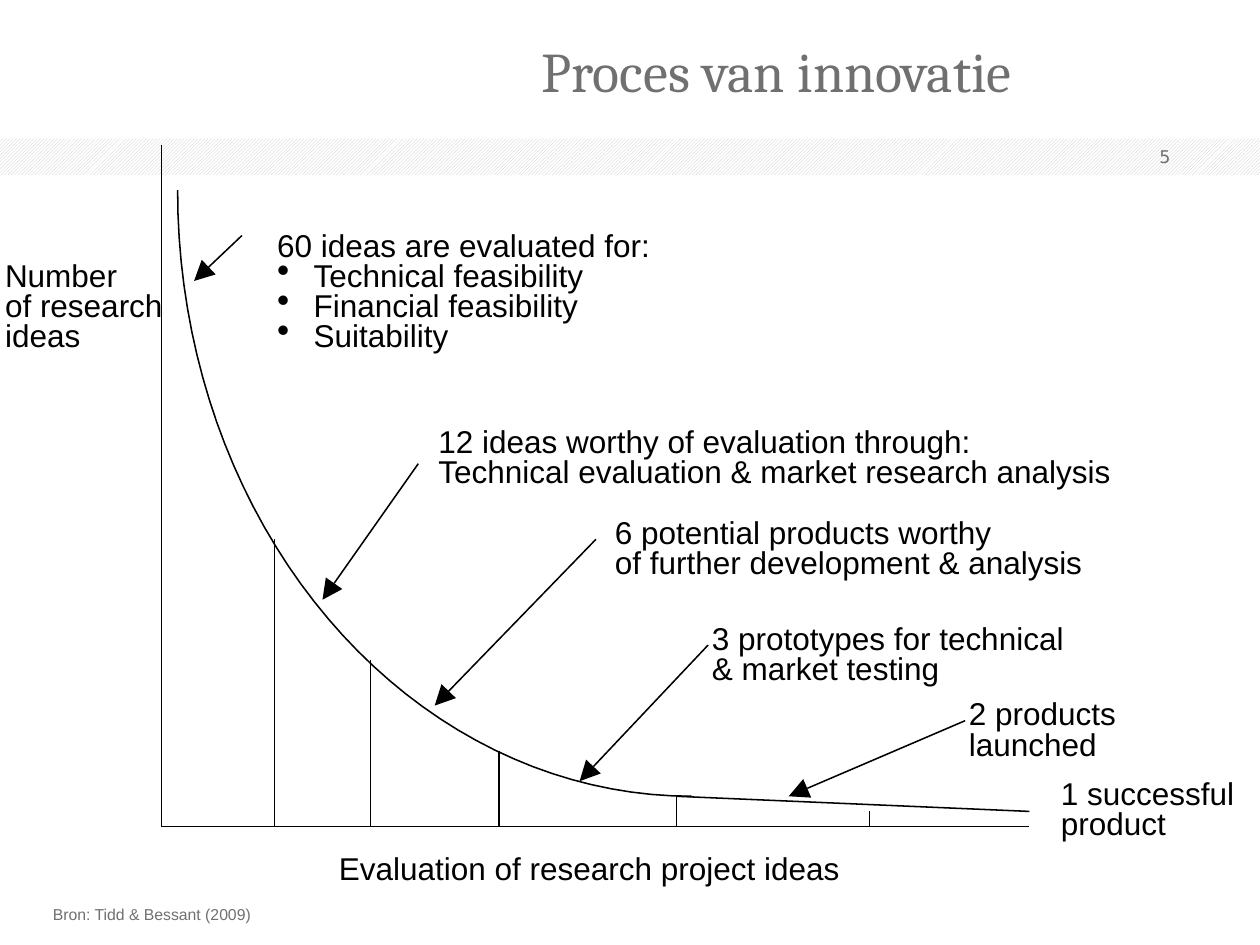
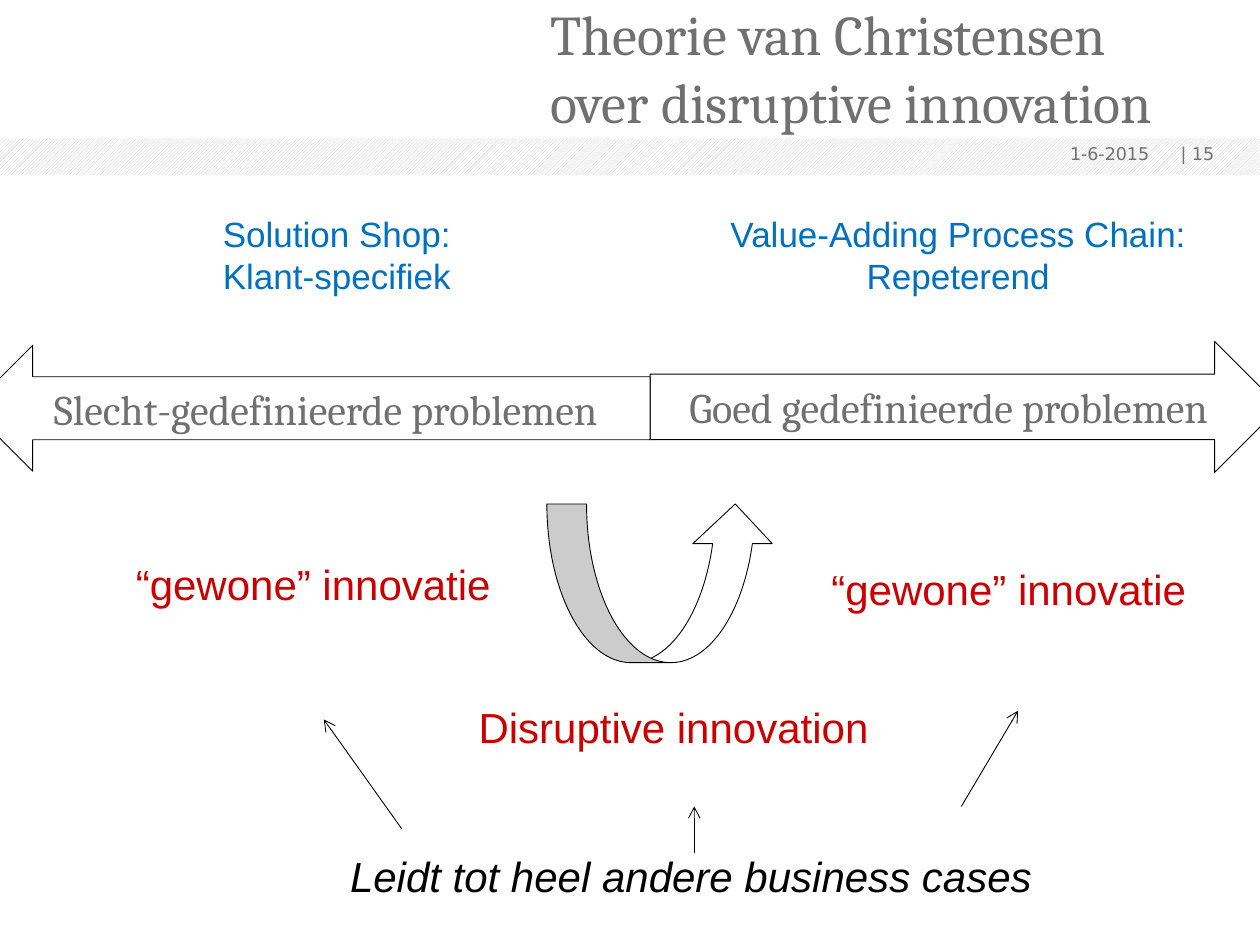
from dataclasses import dataclass
from math import cos, hypot, pi, sin
from typing import NamedTuple

from lxml.etree import SubElement
from pptx import Presentation
from pptx.dml.color import RGBColor
from pptx.enum.dml import MSO_PATTERN
from pptx.enum.shapes import MSO_CONNECTOR, MSO_SHAPE
from pptx.enum.text import MSO_ANCHOR, PP_ALIGN
from pptx.oxml.ns import qn
from pptx.shapes.autoshape import Shape
from pptx.shapes.connector import Connector
from pptx.slide import Slide
from pptx.util import Inches, Pt


@dataclass(frozen=True)
class Theme:
    black: RGBColor = RGBColor(0, 0, 0)
    white: RGBColor = RGBColor(255, 255, 255)
    grey: RGBColor = RGBColor(0x70, 0x70, 0x70)
    hatch: RGBColor = RGBColor(0xC8, 0xC8, 0xC8)
    blue: RGBColor = RGBColor(0x00, 0x70, 0xC0)
    red: RGBColor = RGBColor(0xCC, 0, 0)
    serif: str = "Cambria"
    sans: str = "Arial"
    number_font: str = "DejaVu Sans"
    title_size: float = 32
    large_size: float = 24
    medium_size: float = 20
    label_size: float = 18
    number_size: float = 10
    source_size: float = 9
    label_pitch: float = 17.3
    chart_line: float = 0.88
    thin_line: float = 0.5


THEME = Theme()


class Point(NamedTuple):
    x: float
    y: float


class Box(NamedTuple):
    left: float
    top: float
    width: float
    height: float


@dataclass(frozen=True)
class Style:
    font: str
    size: float
    color: RGBColor
    italic: bool = False
    align: PP_ALIGN = PP_ALIGN.LEFT
    anchor: MSO_ANCHOR = MSO_ANCHOR.TOP
    margin: float = 0
    pitch: float = 0


TITLE = Style(THEME.serif, THEME.title_size, THEME.grey)
NUMBER = Style(THEME.number_font, THEME.number_size, THEME.grey, anchor=MSO_ANCHOR.MIDDLE)
DATE = Style(THEME.number_font, THEME.number_size, THEME.grey, align=PP_ALIGN.RIGHT,
             anchor=MSO_ANCHOR.MIDDLE)
LABEL = Style(THEME.sans, THEME.label_size, THEME.black, pitch=THEME.label_pitch)
SOURCE = Style(THEME.sans, THEME.source_size, THEME.grey, anchor=MSO_ANCHOR.BOTTOM)
PROBLEM = Style(THEME.serif, THEME.large_size, THEME.grey, align=PP_ALIGN.CENTER,
                anchor=MSO_ANCHOR.MIDDLE, margin=0.05)
MODEL = Style(THEME.sans, THEME.medium_size, THEME.blue, margin=0.1)
CENTERED_MODEL = Style(THEME.sans, THEME.medium_size, THEME.blue, align=PP_ALIGN.CENTER, margin=0.1)
INNOVATION = Style(THEME.sans, THEME.large_size, THEME.red, margin=0.1)
CONCLUSION = Style(THEME.sans, THEME.large_size, THEME.black, italic=True, margin=0.1)


class TextItem(NamedTuple):
    lines: tuple[str, ...]
    box: Box
    style: Style


class Label(NamedTuple):
    left: float
    top: float
    width: float
    lines: tuple[str, ...]
    bulleted: bool = False


class Line(NamedTuple):
    start: Point
    end: Point


class BlockArrow(NamedTuple):
    kind: MSO_SHAPE
    box: Box
    text: str


BASELINE = 6.56
LAUNCH_START = Point(5.37, 6.32)
CHART_RIGHT = 8.17
CURVE_CENTER = Point(5.49, 1.51)
CURVE_RADIUS = Point(4.08, 4.81)
CURVE_STEPS = 40
HEAD_LENGTH = 0.16
HEAD_HALF_WIDTH = 0.08

STAGE_TOPS = (Point(2.18, 4.28), Point(2.94, 5.24), Point(3.96, 5.96), LAUNCH_START, Point(6.9, 6.44))
CHART_LINES = (
    Line(LAUNCH_START, Point(CHART_RIGHT, 6.44)),
    Line(Point(1.28, 1.15), Point(1.28, BASELINE)),
    Line(Point(1.28, BASELINE), Point(CHART_RIGHT, BASELINE)),
    *(Line(Point(top.x, BASELINE), top) for top in STAGE_TOPS),
)
CHART_LABELS = (
    Label(2.69, 6.8, 4.3, ("Evaluation of research project ideas",)),
    Label(0.04, 2.09, 1.4, ("Number", "of research", "ideas")),
    Label(8.42, 6.2, 1.55, ("1 successful", "product")),
    Label(7.69, 5.57, 1.4, ("2 products", "launched")),
    Label(5.65, 4.97, 3.2, ("3 prototypes for technical", "& market testing")),
    Label(4.88, 4.13, 4.1, ("6 potential products worthy", "of further development & analysis")),
    Label(3.48, 3.41, 5.8, ("12 ideas worthy of evaluation through:",
                            "Technical evaluation & market research analysis")),
    Label(2.2, 1.85, 3.3, ("60 ideas are evaluated for:",)),
    Label(2.2, 2.09, 2.7, ("Technical feasibility", "Financial feasibility", "Suitability"), True),
)
POINTERS = (
    Line(Point(1.92, 1.87), Point(1.54, 2.23)),
    Line(Point(3.32, 3.68), Point(2.56, 4.76)),
    Line(Point(4.73, 4.28), Point(3.45, 5.6)),
    Line(Point(5.62, 5.12), Point(4.6, 6.2)),
    Line(Point(7.66, 5.72), Point(6.26, 6.32)),
)

PROBLEM_ARROWS = (
    BlockArrow(MSO_SHAPE.RIGHT_ARROW, Box(5.16, 2.71, 5, 1.04), "Goed gedefinieerde problemen"),
    BlockArrow(MSO_SHAPE.LEFT_ARROW, Box(-0.24, 2.74, 5.4, 1), "Slecht-gedefinieerde problemen"),
    BlockArrow(MSO_SHAPE.CURVED_UP_ARROW, Box(4.34, 4, 1.81, 1.26), ""),
)
THEORY_TEXTS = (
    TextItem(("Solution Shop:", "Klant-specifiek"), Box(1.67, 1.64, 2.1, 0.77), MODEL),
    TextItem(("Value-Adding Process Chain:", "Repeterend"), Box(5.68, 1.64, 3.85, 0.77), CENTERED_MODEL),
    TextItem(("“gewone” innovatie",), Box(0.98, 4.38, 3.17, 0.5), INNOVATION),
    TextItem(("“gewone” innovatie",), Box(6.5, 4.42, 3.17, 0.5), INNOVATION),
    TextItem(("Disruptive innovation",), Box(3.7, 5.52, 3.4, 0.5), INNOVATION),
    TextItem(("Leidt tot heel andere business cases",), Box(2.68, 6.7, 5.8, 0.5), CONCLUSION),
)
CONCLUSION_ARROWS = (
    Line(Point(3.19, 6.58), Point(2.57, 5.71)),
    Line(Point(5.51, 6.77), Point(5.51, 6.4)),
    Line(Point(7.63, 6.4), Point(8.08, 5.64)),
)


def to_inches(values: tuple[float, ...]) -> list[Inches]:
    return [Inches(value) for value in values]


def write_text(shape: Shape, lines: tuple[str, ...], style: Style, bulleted: bool = False) -> None:
    frame = shape.text_frame
    frame.word_wrap = True
    frame.vertical_anchor = style.anchor
    frame.margin_left = frame.margin_right = Inches(style.margin)
    frame.margin_top = frame.margin_bottom = Inches(style.margin / 2)
    frame.text = "\n".join(lines)
    for paragraph in frame.paragraphs:
        paragraph.alignment = style.align
        if style.pitch:
            paragraph.line_spacing = Pt(style.pitch)
        if bulleted:
            properties = paragraph._p.get_or_add_pPr()
            properties.set("marL", str(Inches(0.29)))
            properties.set("indent", str(Inches(-0.29)))
            SubElement(properties, qn("a:buSzPct")).set("val", "115000")
            SubElement(properties, qn("a:buChar")).set("char", "•")
        paragraph.font.name = style.font
        paragraph.font.size = Pt(style.size)
        paragraph.font.color.rgb = style.color
        paragraph.font.italic = style.italic


def add_text(slide: Slide, item: TextItem, bulleted: bool = False) -> None:
    write_text(slide.shapes.add_textbox(*to_inches(item.box)), item.lines, item.style, bulleted)


def add_line(slide: Slide, line: Line, weight: float) -> Connector:
    connector = slide.shapes.add_connector(MSO_CONNECTOR.STRAIGHT, *to_inches(line.start + line.end))
    connector.line.color.rgb = THEME.black
    connector.line.width = Pt(weight)
    SubElement(connector._element.spPr, qn("a:effectLst"))
    return connector


def add_outline(slide: Slide, points: list[Point], closed: bool) -> Shape:
    first, *others = [tuple(to_inches(point)) for point in points]
    builder = slide.shapes.build_freeform(*first)
    builder.add_line_segments(others, close=closed)
    shape = builder.convert_to_shape()
    shape.shadow.inherit = False
    return shape


def add_curve(slide: Slide) -> None:
    angles = [pi / 2 * step / CURVE_STEPS for step in range(CURVE_STEPS + 1)]
    points = [Point(CURVE_CENTER.x - CURVE_RADIUS.x * sin(angle),
                    CURVE_CENTER.y + CURVE_RADIUS.y * cos(angle)) for angle in angles]
    curve = add_outline(slide, points, closed=False)
    curve.fill.background()
    curve.line.color.rgb = THEME.black
    curve.line.width = Pt(THEME.chart_line)


def add_pointer(slide: Slide, pointer: Line) -> None:
    start, tip = pointer
    length = hypot(tip.x - start.x, tip.y - start.y)
    across, down = (tip.x - start.x) / length, (tip.y - start.y) / length
    base = Point(tip.x - HEAD_LENGTH * across, tip.y - HEAD_LENGTH * down)
    corners = [Point(base.x - side * down, base.y + side * across)
               for side in (HEAD_HALF_WIDTH, -HEAD_HALF_WIDTH)]
    add_line(slide, Line(start, base), THEME.chart_line)
    head = add_outline(slide, [tip, *corners], closed=True)
    head.fill.solid()
    head.fill.fore_color.rgb = THEME.black
    head.line.fill.background()


def add_open_arrow(slide: Slide, line: Line) -> None:
    connector = add_line(slide, line, THEME.thin_line)
    SubElement(connector.line._get_or_add_ln(), qn("a:tailEnd")).set("type", "arrow")


def add_block_arrow(slide: Slide, arrow: BlockArrow) -> None:
    shape = slide.shapes.add_shape(arrow.kind, *to_inches(arrow.box))
    shape.shadow.inherit = False
    shape.fill.solid()
    shape.fill.fore_color.rgb = THEME.white
    shape.line.color.rgb = THEME.black
    shape.line.width = Pt(THEME.thin_line)
    if arrow.text:
        write_text(shape, (arrow.text,), PROBLEM)


def add_base_slide(presentation: Presentation, title: TextItem) -> Slide:
    slide = presentation.slides.add_slide(presentation.slide_layouts[6])
    band = slide.shapes.add_shape(MSO_SHAPE.RECTANGLE, *to_inches(Box(0, 1.1, 10, 0.29)))
    band.shadow.inherit = False
    band.fill.patterned()
    band.fill.pattern = MSO_PATTERN.LIGHT_UPWARD_DIAGONAL
    band.fill.fore_color.rgb = THEME.hatch
    band.fill.back_color.rgb = THEME.white
    band.line.fill.background()
    add_text(slide, title)
    return slide


def build_process_slide(presentation: Presentation) -> None:
    slide = add_base_slide(presentation, TextItem(("Proces van innovatie",), Box(4.3, 0.29, 4.87, 0.72), TITLE))
    add_text(slide, TextItem(("5",), Box(7.21, 1.1, 2.08, 0.29), DATE))
    add_curve(slide)
    for line in CHART_LINES:
        add_line(slide, line, THEME.chart_line)
    for label in CHART_LABELS:
        box = Box(label.left, label.top, label.width, 0.24 * len(label.lines))
        add_text(slide, TextItem(label.lines, box, LABEL), label.bulleted)
    for pointer in POINTERS:
        add_pointer(slide, pointer)
    add_text(slide, TextItem(("Bron: Tidd & Bessant (2009)",), Box(0.42, 7.19, 1.7, 0.14), SOURCE))


def build_theory_slide(presentation: Presentation) -> None:
    title_lines = ("Theorie van Christensen", "over disruptive innovation")
    slide = add_base_slide(presentation, TextItem(title_lines, Box(4.37, 0, 5.51, 1.2), TITLE))
    add_text(slide, TextItem(("1-6-2015",), Box(7.04, 1.07, 2.08, 0.29), DATE))
    add_text(slide, TextItem(("| 15",), Box(9.37, 1.07, 0.6, 0.29), NUMBER))
    for arrow in PROBLEM_ARROWS:
        add_block_arrow(slide, arrow)
    for item in THEORY_TEXTS:
        add_text(slide, item)
    for line in CONCLUSION_ARROWS:
        add_open_arrow(slide, line)


def main() -> None:
    presentation = Presentation()
    presentation.slide_width = Inches(10)
    presentation.slide_height = Inches(7.5)
    build_process_slide(presentation)
    build_theory_slide(presentation)
    presentation.save("out.pptx")


if __name__ == "__main__":
    main()
